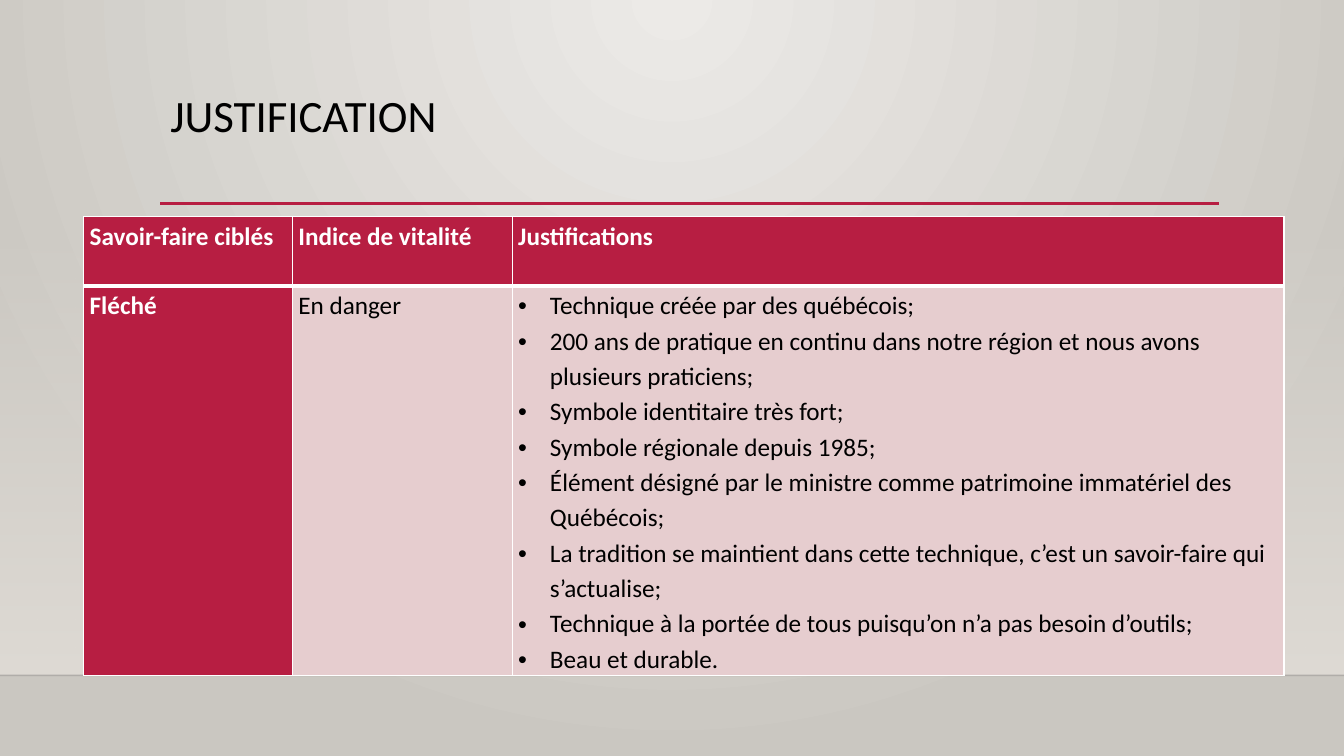
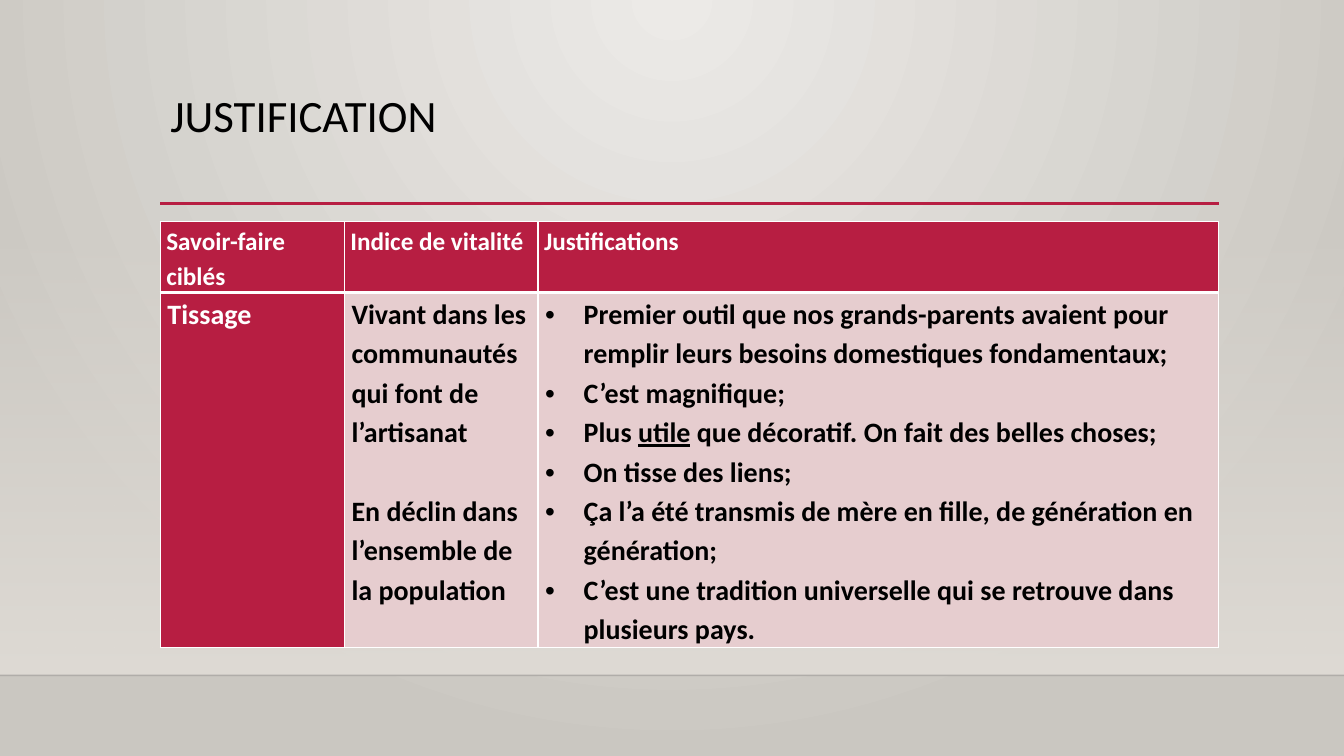
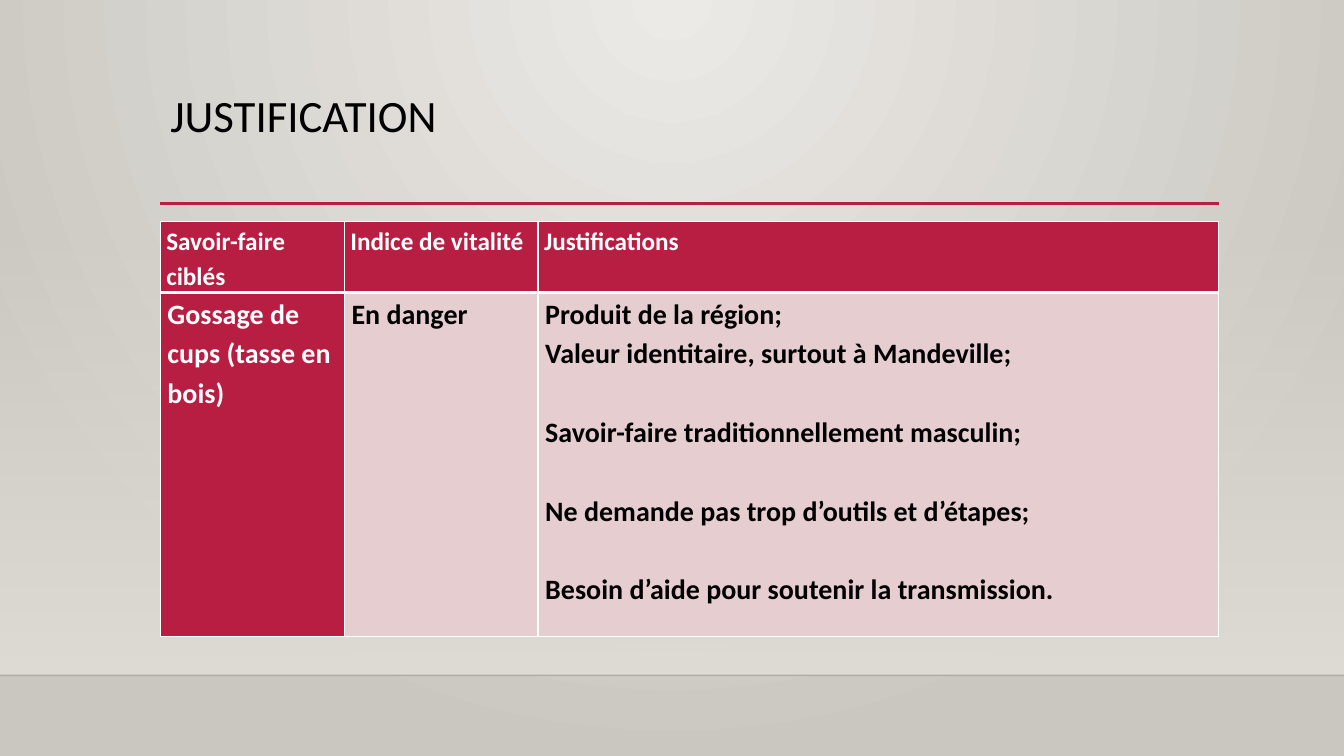
from dataclasses import dataclass

from lxml.etree import SubElement
from pptx import Presentation
from pptx.dml.color import RGBColor
from pptx.enum.shapes import MSO_CONNECTOR, MSO_SHAPE
from pptx.enum.text import MSO_ANCHOR, MSO_AUTO_SIZE, PP_ALIGN
from pptx.oxml import parse_xml
from pptx.oxml.ns import nsdecls, qn
from pptx.util import Cm, Pt

COLORS = {
    "accent": "B71E42",
    "pale": "E6CDCF",
    "white": "FFFFFF",
    "black": "000000",
    "glow": "ECEAE7",
    "edge": "CAC7C1",
    "band": "DFDBD5",
    "floor": "000001",
}
FONT = "Calibri"
WIDTH, HEIGHT = 33.87, 19.05
LEFT, RIGHT = 4.04, 30.73
FLOOR = 17.02
COLUMNS = (0.174, 0.183, 0.643)
ROWS = (1.75, 8.66)
HEADINGS = ("Savoir-faire ciblés", "Indice de vitalité", "Justifications")


@dataclass
class Craft:
    """Describe one craft and the look of its table."""
    name: str
    vitality: tuple
    reasons: tuple
    box: tuple = (LEFT, 5.59, 26.67)
    size: int = 20
    bold: bool = True
    inset: float = 0.18
    indent: float = 0.97
    gaps: tuple = ()


CRAFTS = (
    Craft(
        "Fléché",
        ("En danger",),
        (
            "Technique créée par des québécois;",
            "200 ans de pratique en continu dans notre région et nous avons plusieurs praticiens;",
            "Symbole identitaire très fort;",
            "Symbole régionale depuis 1985;",
            "Élément désigné par le ministre comme patrimoine immatériel des Québécois;",
            "La tradition se maintient dans cette technique, c’est un savoir-faire qui s’actualise;",
            "Technique à la portée de tous puisqu’on n’a pas besoin d’outils;",
            "Beau et durable.",
        ),
        box=(2.11, 5.46, 30.25), size=18, bold=False, inset=0.15, indent=0.8,
    ),
    Craft(
        "Tissage",
        (
            "Vivant dans les communautés qui font de l’artisanat",
            "En déclin dans l’ensemble de la population",
        ),
        (
            "Premier outil que nos grands-parents avaient pour remplir leurs besoins domestiques fondamentaux;",
            "C’est magnifique;",
            "Plus _utile_ que décoratif. On fait des belles choses;",
            "On tisse des liens;",
            "Ça l’a été transmis de mère en fille, de génération en génération;",
            "C’est une tradition universelle qui se retrouve dans plusieurs pays.",
        ),
    ),
    Craft(
        "Gossage de cups (tasse en bois)",
        ("En danger",),
        (
            "Produit de la région;",
            "Valeur identitaire, surtout à Mandeville;",
            "Savoir-faire traditionnellement masculin;",
            "Ne demande pas trop d’outils et d’étapes;",
            "Besoin d’aide pour soutenir la transmission.",
        ),
        indent=0, gaps=(2, 3, 4),
    ),
)


def rgb(name):
    """Return a palette colour."""
    return RGBColor.from_string(COLORS[name])


def apply(obj, **values):
    """Set each given attribute on an object."""
    for key, value in values.items():
        setattr(obj, key, value)


def set_alpha(parent, percent):
    """Make the colour inside an element translucent."""
    color = next(parent.iter(qn("a:srgbClr")))
    SubElement(color, qn("a:alpha")).set("val", str(percent * 1000))


def set_gradient(fill, start, end):
    """Fill with a gradient between two palette colours."""
    fill.gradient()
    for stop, name in zip(fill.gradient_stops, (start, end)):
        stop.color.rgb = rgb(name)


def set_background(master):
    """Paint the radial glow behind every slide."""
    set_gradient(master.background.fill, "glow", "edge")
    lin = next(master.element.cSld.iter(qn("a:lin")))
    glow = parse_xml(
        f'<a:path {nsdecls("a")} path="circle">'
        '<a:fillToRect l="43000" t="0" r="43000" b="100000"/></a:path>'
    )
    lin.getparent().replace(lin, glow)


def add_rule(s, x1, x2, y, color, width):
    """Draw a horizontal rule without shadow."""
    rule = s.shapes.add_connector(MSO_CONNECTOR.STRAIGHT, Cm(x1), Cm(y), Cm(x2), Cm(y))
    rule.line.color.rgb = rgb(color)
    rule.line.width = Pt(width)
    SubElement(rule._element.spPr, qn("a:effectLst"))
    return rule


def add_decor(layout, s):
    """Build the band and the rules, then hand them to the layout."""
    band = s.shapes.add_shape(
        MSO_SHAPE.RECTANGLE, 0, Cm(5.61), Cm(WIDTH), Cm(FLOOR - 5.61)
    )
    band.shadow.inherit = False
    band.line.fill.background()
    set_gradient(band.fill, "band", "band")
    band.fill.gradient_angle = 270
    set_alpha(band._element.spPr, 0)
    floor = add_rule(s, 0, WIDTH, FLOOR, "floor", 1)
    set_alpha(floor._element.spPr, 20)
    underline = add_rule(s, LEFT, RIGHT, 5.13, "accent", 2.5)
    for i, sp in enumerate((band, floor, underline)):
        el = sp._element
        next(el.iter(qn("p:cNvPr"))).set("id", str(100 + i))
        layout.shapes._spTree.insert(2 + i, el)


def add_title(s, text, x, y, w, h):
    """Place and format the title placeholder."""
    title = s.shapes.title
    apply(title, left=Cm(x), top=Cm(y), width=Cm(w), height=Cm(h))
    tf = title.text_frame
    apply(tf, text=text, word_wrap=True, auto_size=MSO_AUTO_SIZE.NONE,
          vertical_anchor=MSO_ANCHOR.TOP)
    p = tf.paragraphs[0]
    apply(p, alignment=PP_ALIGN.LEFT, line_spacing=0.9)
    font = p.runs[0].font
    apply(font, name=FONT, size=Pt(32))
    font.color.rgb = rgb("black")


def set_borders(cell, top, bottom):
    """Give a cell white borders."""
    widths = {"lnL": 1, "lnR": 1, "lnT": top, "lnB": bottom}
    for i, (tag, width) in enumerate(widths.items()):
        cell._tc.get_or_add_tcPr().insert(i, parse_xml(
            f'<a:{tag} {nsdecls("a")} w="{Pt(width)}"><a:solidFill>'
            f'<a:srgbClr val="{COLORS["white"]}"/></a:solidFill></a:{tag}>'
        ))


def add_bullet(p, indent):
    """Give a paragraph a hanging bullet."""
    pPr = p._p.get_or_add_pPr()
    pPr.set("marL", str(Cm(indent)))
    pPr.set("indent", str(-Cm(indent)))
    SubElement(pPr, qn("a:buFont")).set("typeface", "Arial")
    SubElement(pPr, qn("a:buChar")).set("char", "•")


def fill_cell(cell, lines, fill, color, size, bold, inset, indent=0, gaps=()):
    """Write paragraphs in a cell, underlining what stands between underscores."""
    cell.fill.solid()
    cell.fill.fore_color.rgb = rgb(fill)
    apply(cell, margin_left=Cm(inset), margin_right=Cm(inset), margin_top=0,
          margin_bottom=0, vertical_anchor=MSO_ANCHOR.TOP)
    tf = cell.text_frame
    for i, line in enumerate(lines):
        p = tf.paragraphs[0] if i == 0 else tf.add_paragraph()
        p.line_spacing = 1.15
        if i in gaps:
            p.space_before = Pt(28)
        if indent:
            add_bullet(p, indent)
        for j, part in enumerate(line.split("_")):
            r = p.add_run()
            r.text = part
            apply(r.font, name=FONT, size=Pt(size), bold=bold)
            r.font.color.rgb = rgb(color)
            if j % 2:
                r.font.underline = True


def add_craft_table(s, craft, x, y, w):
    """Build the table of one craft in the given box."""
    table = s.shapes.add_table(2, 3, Cm(x), Cm(y), Cm(w), Cm(sum(ROWS))).table
    for row, height in zip(table.rows, ROWS):
        row.height = Cm(height)
    for column, share in zip(table.columns, COLUMNS):
        column.width = Cm(round(w * share, 2))
    for i, heading in enumerate(HEADINGS):
        fill_cell(table.cell(0, i), (heading,), "accent", "white", 18, True, 0.15)
        set_borders(table.cell(0, i), 1, 3)
        set_borders(table.cell(1, i), 3, 1)
    size, inset = craft.size, craft.inset
    name, vitality, reasons = table.rows[1].cells
    fill_cell(name, (craft.name,), "accent", "white", size, True, inset)
    fill_cell(vitality, craft.vitality, "pale", "black", size, craft.bold, inset, gaps=(1,))
    fill_cell(reasons, craft.reasons, "pale", "black", size, craft.bold, inset,
              craft.indent, craft.gaps)


def main():
    """Build and save the presentation."""
    prs = Presentation()
    apply(prs, slide_width=Cm(WIDTH), slide_height=Cm(HEIGHT))
    set_background(prs.slide_master)
    layout = prs.slide_layouts.get_by_name("Title Only")
    slides = [prs.slides.add_slide(layout) for _ in CRAFTS]
    add_decor(layout, slides[0])
    for s, craft in zip(slides, CRAFTS):
        add_title(s, "JUSTIFICATION", LEFT, 2.24, 26.67, 2.92)
        add_craft_table(s, craft, *craft.box)
    prs.save("out.pptx")


if __name__ == "__main__":
    main()
